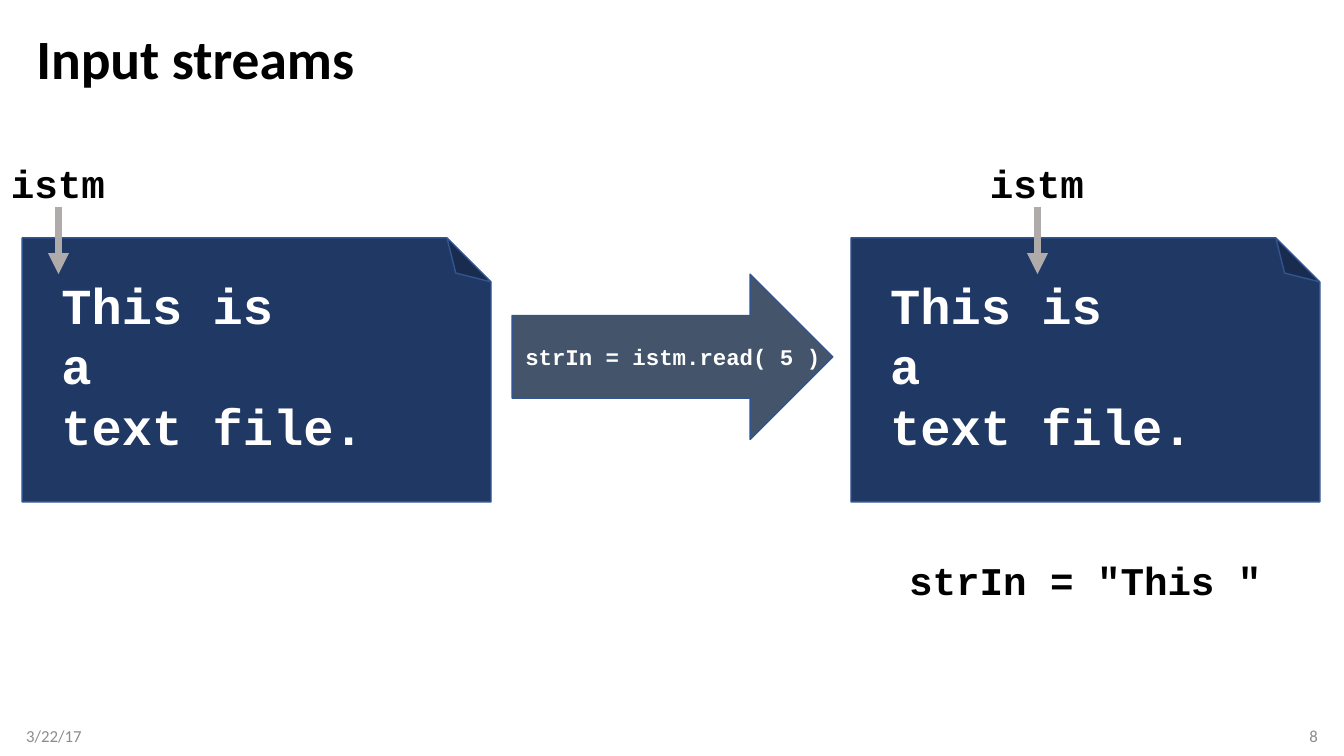
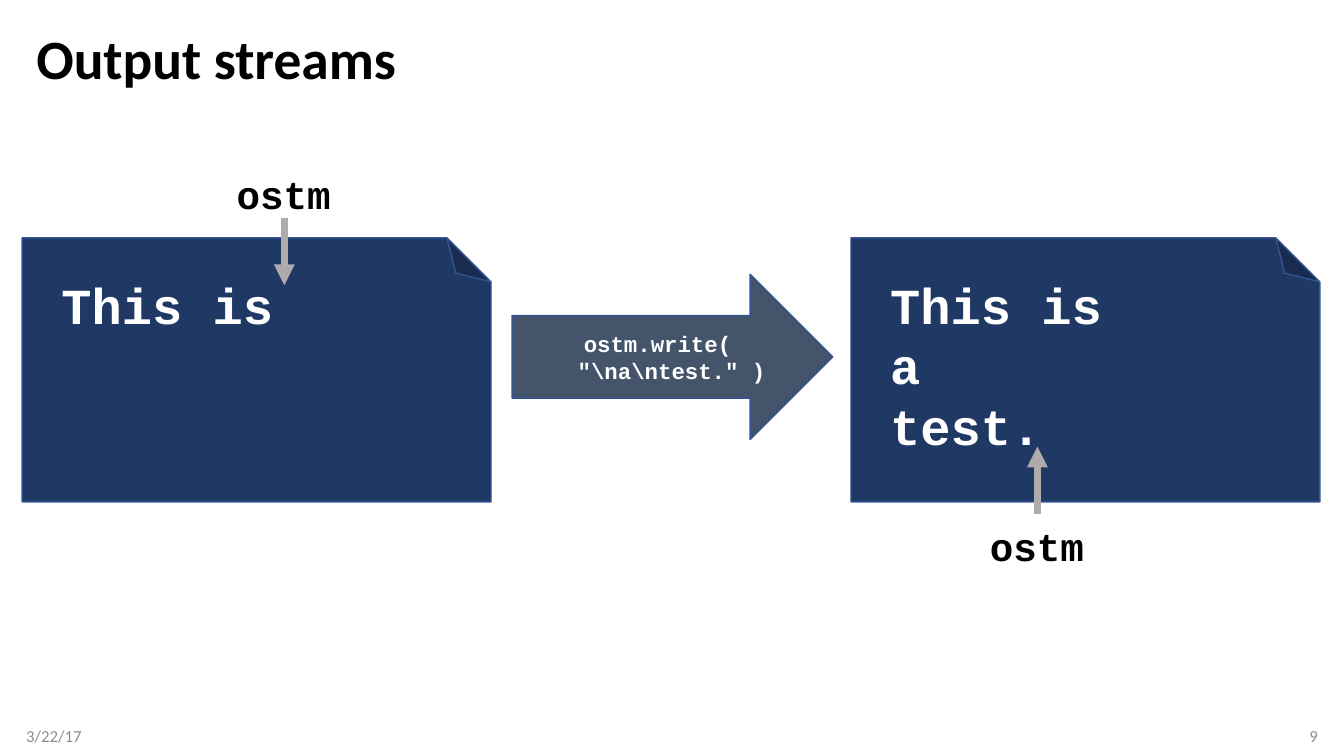
from pptx import Presentation
from pptx.dml.color import RGBColor
from pptx.enum.shapes import MSO_CONNECTOR, MSO_SHAPE
from pptx.enum.text import MSO_ANCHOR, PP_ALIGN
from pptx.oxml.ns import qn
from pptx.util import Inches, Pt
from lxml.etree import SubElement

BLACK = RGBColor(0x00, 0x00, 0x00)
WHITE = RGBColor(0xFF, 0xFF, 0xFF)
FOOTER_GREY = RGBColor(0x8C, 0x8C, 0x8C)
POINTER_GREY = RGBColor(0xAF, 0xAB, 0xAB)
FILE_NAVY = RGBColor(0x20, 0x38, 0x64)
CALL_SLATE = RGBColor(0x44, 0x54, 0x6A)
OUTLINE_BLUE = RGBColor(0x32, 0x54, 0x91)

TITLE_FONT = {"name": "Calibri", "size": Pt(39.6), "bold": True}
FOOTER_FONT = {"name": "Calibri", "size": Pt(12), "bold": False}
FILE_FONT = {"name": "Courier New", "size": Pt(36), "bold": True}
LABEL_FONT = {"name": "Courier New", "size": Pt(28), "bold": True}
CALL_FONT = {"name": "Courier New", "size": Pt(16), "bold": True}

BEFORE_LEFT, AFTER_LEFT = 0.22, 8.44
FILE_TOP, FILE_WIDTH, FILE_HEIGHT = 2.36, 4.65, 2.62
POINTER_LENGTH = 0.67
LABEL_WIDTH, LABEL_HEIGHT = 1.14, 0.57
MARGIN = 0.26
FOOTER_WIDTH = 3
CONTENT_WIDTH = 12.81


def set_values(target, values):
    for attribute, value in values.items():
        setattr(target, attribute, value)


class StreamDeck:
    def __init__(self):
        self.presentation = Presentation()
        set_values(self.presentation, {"slide_width": Inches(13.33),
                                       "slide_height": Inches(7.5)})
        self.slide = None

    def fill_text(self, frame, lines, font, color, align=PP_ALIGN.LEFT, **frame_format):
        set_values(frame, {"word_wrap": True, "vertical_anchor": MSO_ANCHOR.TOP,
                           **frame_format})
        frame.text = "\n".join(lines)
        for paragraph in frame.paragraphs:
            paragraph.alignment = align
            for run in paragraph.runs:
                set_values(run.font, font)
                run.font.color.rgb = color

    def start_slide(self, heading, number):
        self.slide = self.presentation.slides.add_slide(self.presentation.slide_layouts[5])
        title = self.slide.shapes.title
        set_values(title, {"left": Inches(MARGIN), "top": Inches(0.25),
                           "width": Inches(CONTENT_WIDTH), "height": Inches(0.72)})
        self.fill_text(title.text_frame, [heading], TITLE_FONT, BLACK,
                       vertical_anchor=MSO_ANCHOR.MIDDLE)
        title.text_frame.paragraphs[0].line_spacing = 0.9
        self.footer(MARGIN, "3/22/17", PP_ALIGN.LEFT, margin_left=0)
        self.footer(MARGIN + CONTENT_WIDTH - FOOTER_WIDTH, str(number), PP_ALIGN.RIGHT,
                    margin_right=0)

    def footer(self, left, text, align, **margins):
        box = self.slide.shapes.add_textbox(Inches(left), Inches(7.1),
                                            Inches(FOOTER_WIDTH), Inches(0.4))
        self.fill_text(box.text_frame, [text], FOOTER_FONT, FOOTER_GREY, align,
                       vertical_anchor=MSO_ANCHOR.MIDDLE, **margins)

    def outlined_shape(self, shapes, kind, left, top, width, height, fill):
        shape = shapes.add_shape(kind, Inches(left), Inches(top), Inches(width), Inches(height))
        shape.shadow.inherit = False
        shape.fill.solid()
        shape.fill.fore_color.rgb = fill
        shape.line.color.rgb = OUTLINE_BLUE
        shape.line.width = Pt(1)
        return shape

    def file_page(self, left, lines):
        group = self.slide.shapes.add_group_shape()
        page = self.outlined_shape(group.shapes, MSO_SHAPE.FOLDED_CORNER, left, FILE_TOP,
                                   FILE_WIDTH, FILE_HEIGHT, FILE_NAVY)
        page.element.spPr.get_or_add_xfrm().set("flipV", "1")
        content = group.shapes.add_textbox(Inches(left + 0.29), Inches(FILE_TOP + 0.31),
                                           Inches(3.23), Inches(1.92))
        self.fill_text(content.text_frame, lines, FILE_FONT, WHITE)

    def call_arrow(self, lines, indent, first_line=0, wrap=True):
        arrow = self.outlined_shape(self.slide.shapes, MSO_SHAPE.RIGHT_ARROW, 5.08, 2.72,
                                    3.18, 1.64, CALL_SLATE)
        self.fill_text(arrow.text_frame, lines, CALL_FONT, WHITE, word_wrap=wrap,
                       vertical_anchor=MSO_ANCHOR.MIDDLE, margin_left=Inches(indent),
                       margin_right=0, margin_top=0, margin_bottom=0)
        opening = arrow.text_frame.paragraphs[0]._p.get_or_add_pPr()
        opening.set("indent", str(Inches(first_line)))

    def label(self, text, left, top, width=LABEL_WIDTH, align=PP_ALIGN.LEFT):
        box = self.slide.shapes.add_textbox(Inches(left), Inches(top),
                                            Inches(width), Inches(LABEL_HEIGHT))
        self.fill_text(box.text_frame, [text], LABEL_FONT, BLACK, align, word_wrap=False)

    def pointer(self, name, x, start, upward=False):
        end = start - POINTER_LENGTH if upward else start + POINTER_LENGTH
        pointer = self.slide.shapes.add_connector(MSO_CONNECTOR.STRAIGHT, Inches(x),
                                                  Inches(start), Inches(x), Inches(end))
        pointer.line.color.rgb = POINTER_GREY
        pointer.line.width = Pt(5)
        properties = pointer.element.spPr
        SubElement(properties.find(qn("a:ln")), qn("a:tailEnd"), type="triangle")
        SubElement(properties, qn("a:effectLst"))
        label_top = start + 0.03 if upward else start - 0.52
        self.label(name, x - LABEL_WIDTH / 2, label_top)


def main():
    deck = StreamDeck()
    text_file = ["This is", "a", "text file."]

    deck.start_slide("Input streams", 8)
    deck.file_page(BEFORE_LEFT, text_file)
    deck.pointer("istm", 0.58, 2.05)
    deck.call_arrow(["strIn = istm.read( 5 )"], 0.13, wrap=False)
    deck.file_page(AFTER_LEFT, text_file)
    deck.pointer("istm", 10.29, 2.05)
    deck.label('strIn = "This "', 8.9, 5.47, 3.73, PP_ALIGN.CENTER)

    deck.start_slide("Output streams", 9)
    deck.file_page(BEFORE_LEFT, ["This is"])
    deck.pointer("ostm", 2.82, 2.16)
    deck.call_arrow(["ostm.write(", '"\\na\\ntest." )'], 0.65, first_line=0.06)
    deck.file_page(AFTER_LEFT, ["This is", "a", "test."])
    deck.pointer("ostm", 10.29, 5.1, upward=True)

    deck.presentation.save("out.pptx")


if __name__ == "__main__":
    main()
